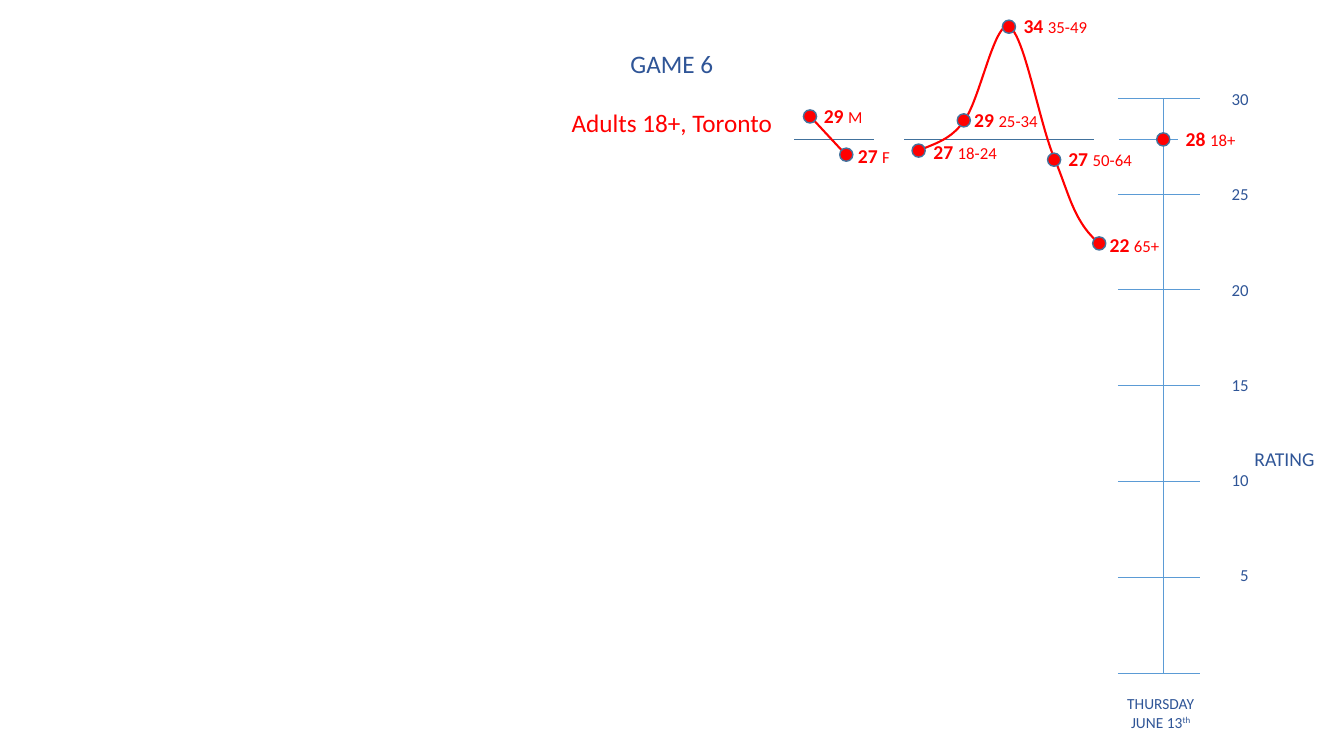
import pptx
import pptx.util
import pptx.dml.color
import pptx.enum.shapes
import pptx.enum.text
from lxml import etree

Pt = pptx.util.Pt
ALIGN = pptx.enum.text.PP_ALIGN
RED, NAVY = "FF0000", "2F5597"
TICK, MEAN, EDGE = "5B9BD5", "41719C", "43739E"
AXIS, TOP, STEP = 830.9, 69.85, 68.52  # rating axis: x, first tick, spacing
LEVEL = 99.6  # height of the overall rating

# Dots, each with its label: centre, label box, rating, group, alignment
AGE, GAP = 656.2, 32.25
DOTS = [
    ((578.6, 83.2), (581, 70.6, 42.5), "29", "M", ALIGN.CENTER),
    ((604.5, 110.5), (605.5, 99.4, 37.4), "27", "F", ALIGN.CENTER),
    ((AGE, 107.6), (659.5, 96.5, 59.8), "27", "18-24", ALIGN.CENTER),
    ((AGE + GAP, 86), (688.3, 73.4, 60.5), "29", "25-34", ALIGN.CENTER),
    ((AGE + 2 * GAP, 19.1), (723.6, 6.5, 60.5), "34", "35-49", ALIGN.CENTER),
    ((AGE + 3 * GAP, 114.1), (756, 101.5, 60.5), "27", "50-64", ALIGN.LEFT),
    ((AGE + 4 * GAP, 173.9), (785.5, 162.7, 50.4), "22", "65+", ALIGN.LEFT),
    ((AXIS, LEVEL), (839.5, 87.1, 50.4), "28", "18+", ALIGN.CENTER),
]

# Age curve: start, then two handles and an end for each part
CURVE = [
    (657.4, 107.3),
    (665.3, 103, 679, 100.8, 689, 85.7),
    (699.8, 71.3, 710.6, 14.4, 720.7, 19.1),
    (731.5, 23.8, 742.3, 87.8, 753.1, 113),
    (763.9, 139, 766.8, 158.4, 785.5, 174.2),
]


def color(code):
    return pptx.dml.color.RGBColor.from_string(code)


def stroke(shape, code, width):
    shape.line.color.rgb = color(code)
    shape.line.width = Pt(width)


def style(run, size, code, bold=False):
    font = run.font
    font.name, font.size, font.bold = "Calibri", Pt(size), bold
    font.color.rgb = color(code)


def fit(frame):
    frame.word_wrap = False
    frame.auto_size = pptx.enum.text.MSO_AUTO_SIZE.SHAPE_TO_FIT_TEXT
    frame.vertical_anchor = pptx.enum.text.MSO_ANCHOR.TOP


def write(slide, box, text, size, code, align=ALIGN.CENTER):
    frame = slide.shapes.add_textbox(*map(Pt, box)).text_frame
    fit(frame)
    frame.text = text
    for para in frame.paragraphs:
        para.alignment = align
        for run in para.runs:
            style(run, size, code)
    return frame


def head(slide, box, text):
    title = slide.shapes.title
    title.left, title.top, title.width, title.height = map(Pt, box)
    fit(title.text_frame)
    title.text_frame.text = text
    para = title.text_frame.paragraphs[0]
    para.alignment = ALIGN.CENTER
    style(para.runs[0], 18, NAVY)


def rule(slide, start, end, code, width=0.25):
    kind = pptx.enum.shapes.MSO_CONNECTOR.STRAIGHT
    line = slide.shapes.add_connector(kind, *map(Pt, start + end))
    stroke(line, code, width)
    etree.SubElement(line._element.spPr, pptx.oxml.ns.qn("a:effectLst"))


def dot(slide, spot, size=9.4):
    x, y = spot
    kind = pptx.enum.shapes.MSO_SHAPE.OVAL
    mark = slide.shapes.add_shape(
        kind, Pt(x - size / 2), Pt(y - size / 2), Pt(size), Pt(size))
    mark.shadow.inherit = False
    mark.fill.solid()
    mark.fill.fore_color.rgb = color(RED)
    stroke(mark, EDGE, 1)


def label(slide, box, rate, group, align):
    frame = write(slide, box + (24.5,), rate + " ", 14, RED, align)
    para = frame.paragraphs[0]
    para.runs[0].font.bold = True
    run = para.add_run()
    run.text = group
    style(run, 12, RED)


def curve(slide, parts, count=24):
    last = parts[0]
    spots = []
    for ax, ay, bx, by, x, y in parts[1:]:
        for i in range(1, count + 1):
            t = i / count
            u = 1 - t
            mix = (u ** 3, 3 * u * u * t, 3 * u * t * t, t ** 3)
            spots.append(tuple(
                Pt(sum(m * v for m, v in zip(mix, row)))
                for row in ((last[0], ax, bx, x), (last[1], ay, by, y))))
        last = (x, y)
    form = slide.shapes.build_freeform(*map(Pt, parts[0]))
    form.add_line_segments(spots, close=False)
    shape = form.convert_to_shape()
    shape.shadow.inherit = False
    shape.fill.background()
    stroke(shape, RED, 1.5)


def axis(slide):
    rule(slide, (AXIS, TOP), (AXIS, TOP + 6 * STEP), TICK)
    for i in range(7):
        y = TOP + i * STEP
        rule(slide, (798.5, y), (856.8, y), TICK)
    for i in range(6):
        box = (872.4, 60 + 68 * i, 26.6, 21.6)
        write(slide, box, str(30 - 5 * i), 12, NAVY, ALIGN.RIGHT)
    write(slide, (888.5, 315.4, 57.6, 24.5), "RATING", 14, NAVY, ALIGN.RIGHT)

    # Date below the axis
    box = (797, 492.5, 64.1, 33.8)
    date = write(slide, box, "THURSDAY\nJUNE 13", 11, NAVY)
    run = date.paragraphs[1].add_run()
    run.text = "th"
    style(run, 11, NAVY)
    run.font._element.set("baseline", "30000")


def main():
    deck = pptx.Presentation()
    deck.slide_width, deck.slide_height = Pt(960), Pt(540)
    slide = deck.slides.add_slide(deck.slide_layouts[5])

    # Headings
    head(slide, (442.8, 31, 74.2, 28.8), "GAME 6")
    write(slide, (400.3, 73.4, 159.1, 28.8), "Adults 18+, Toronto", 18, RED)

    # Axis and overall level
    axis(slide)
    for left, right, code in ((567.4, 624.2, MEAN), (645.8, 781.5, MEAN),
                              (799.2, 841.7, TICK)):
        rule(slide, (left, LEVEL), (right, LEVEL), code)

    # Ratings by sex and by age
    curve(slide, CURVE)
    rule(slide, (581.8, 86.4), (601.2, 107.3), RED, 1.5)
    for spot, box, rate, group, align in DOTS:
        dot(slide, spot)
        label(slide, box, rate, group, align)

    deck.save("out.pptx")


if __name__ == "__main__":
    main()
